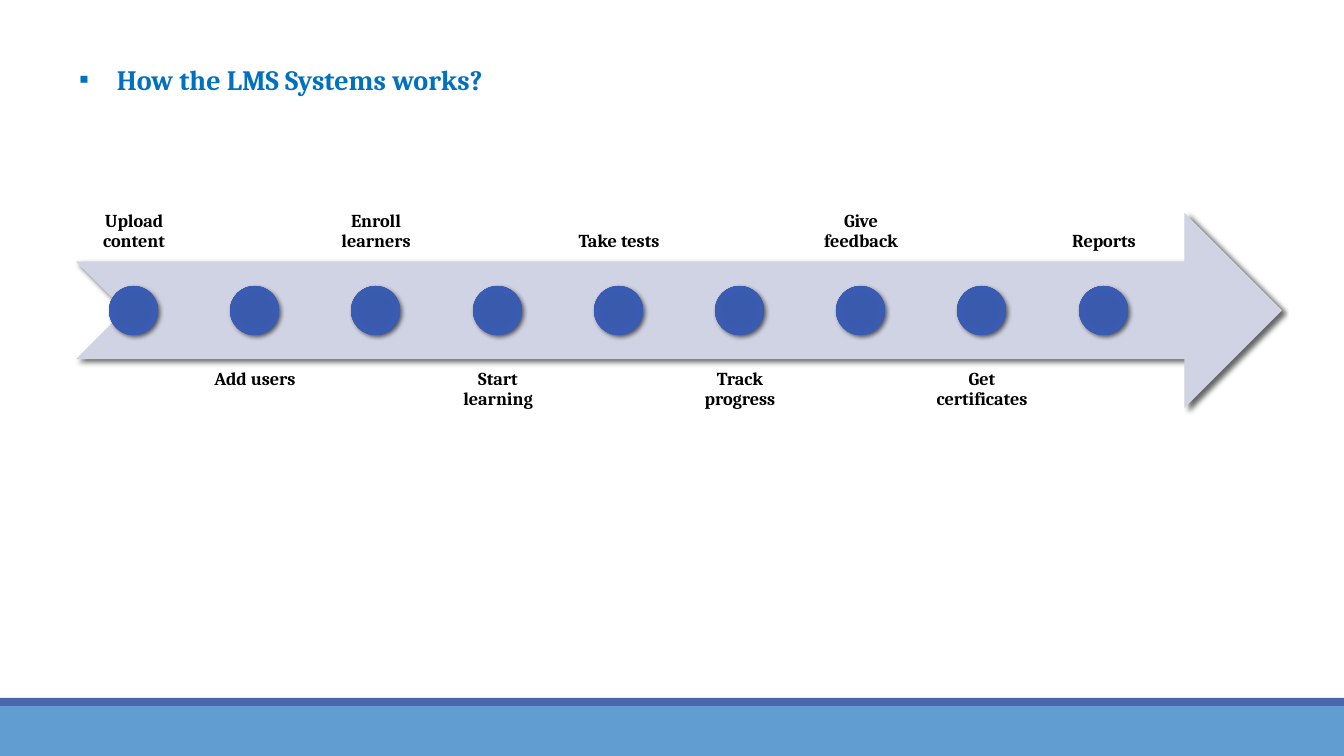
from pptx import Presentation, oxml
from pptx.dml.color import RGBColor
from pptx.enum import shapes, text
from pptx.oxml import ns
from pptx.util import Pt

PX = 914400 / 100.8
STEPS = ["Upload content", "Add users", "Enroll learners", "Start learning",
         "Take tests", "Track progress", "Give feedback", "Get certificates", "Reports"]
STEP_PITCH = 121.2
DOT_STOPS = [(0, "3759AE"), (34, "3A5BAD"), (70, "395BB2"), (100, "4564B1")]


def add_figure(page, preset, left, top, width, height, fill=None, shadow_blur=None):
    """Add a borderless shape; shadow_blur is in points."""
    figure = page.shapes.add_shape(preset, *(round(n * PX) for n in (left, top, width, height)))
    figure.shadow.inherit = False
    figure.line.fill.background()
    if fill:
        figure.fill.solid()
        figure.fill.fore_color.rgb = RGBColor.from_string(fill)
    if shadow_blur:
        effects = figure._element.spPr.find(ns.qn("a:effectLst"))
        effects.append(oxml.parse_xml(
            f'<a:outerShdw {ns.nsdecls("a")} blurRad="{Pt(shadow_blur)}" dist="{Pt(2)}" '
            'dir="2700000" algn="tl" rotWithShape="0"><a:srgbClr val="000000">'
            '<a:alpha val="60000"/></a:srgbClr></a:outerShdw>'))
    return figure


def write(box, words, size, color, align, anchor, inset_x, inset_y, spacing=1.0):
    frame = box.text_frame
    frame.word_wrap = True
    frame.auto_size = text.MSO_AUTO_SIZE.NONE
    frame.vertical_anchor = anchor
    frame.margin_left = frame.margin_right = round(inset_x * PX)
    frame.margin_top = frame.margin_bottom = round(inset_y * PX)
    para = frame.paragraphs[0]
    para.alignment = align
    para.line_spacing = spacing
    span = para.add_run()
    span.text = words
    span.font.name = "Cambria"
    span.font.size = Pt(size)
    span.font.bold = True
    span.font.color.rgb = RGBColor.from_string(color)
    return para


deck = Presentation()
deck.slide_width, deck.slide_height = round(1344 * PX), round(756 * PX)
page = deck.slides.add_slide(deck.slide_layouts[5])

# Footer bands
add_figure(page, shapes.MSO_SHAPE.RECTANGLE, 0, 706, 1344, 50, "629DD1")
add_figure(page, shapes.MSO_SHAPE.RECTANGLE, 0, 698, 1344, 8, "4A66AC")

# Heading with a square bullet
title = page.shapes.title
title.left, title.top, title.width, title.height = (round(n * PX) for n in (69, 57, 481, 44))
heading = write(title, "How the LMS Systems works?", 20, "0070C0",
                text.PP_ALIGN.LEFT, text.MSO_ANCHOR.TOP, 10, 5)
props = heading._p.get_or_add_pPr()
props.set("marL", "342900")
props.set("indent", "-342900")
for bullet in ('<a:buFont {} typeface="Wingdings"/>', '<a:buChar {} char="▪"/>'):
    if "buFont" in bullet:
        bullet = bullet.replace("Wingdings", "Arial")
    props.append(oxml.parse_xml(bullet.format(ns.nsdecls("a"))))

# Timeline: labels alternate above and below the arrow
add_figure(page, shapes.MSO_SHAPE.NOTCHED_RIGHT_ARROW, 76, 213, 1206, 195, "D0D3E3", 3)
stops = "".join(f'<a:gs pos="{pos * 1000}"><a:srgbClr val="{color}"/></a:gs>'
                for pos, color in DOT_STOPS)
for index, step in enumerate(STEPS):
    left = round(76 + index * STEP_PITCH)
    above = index % 2 == 0
    label = page.shapes.add_textbox(
        *(round(n * PX) for n in (left, 66 if above else 360, 116, 195)))
    write(label, step, 13, "000000", text.PP_ALIGN.CENTER,
          text.MSO_ANCHOR.BOTTOM if above else text.MSO_ANCHOR.TOP, 10, 10, 0.9)
    dot = add_figure(page, shapes.MSO_SHAPE.OVAL, left + 33, 286, 49, 49, shadow_blur=3.5)
    dot._element.spPr.insert(2, oxml.parse_xml(
        f'<a:gradFill {ns.nsdecls("a")} rotWithShape="1"><a:gsLst>{stops}</a:gsLst>'
        '<a:path path="circle"><a:fillToRect l="100000" t="100000" r="100000" b="100000"/>'
        '</a:path></a:gradFill>'))

deck.save("out.pptx")
